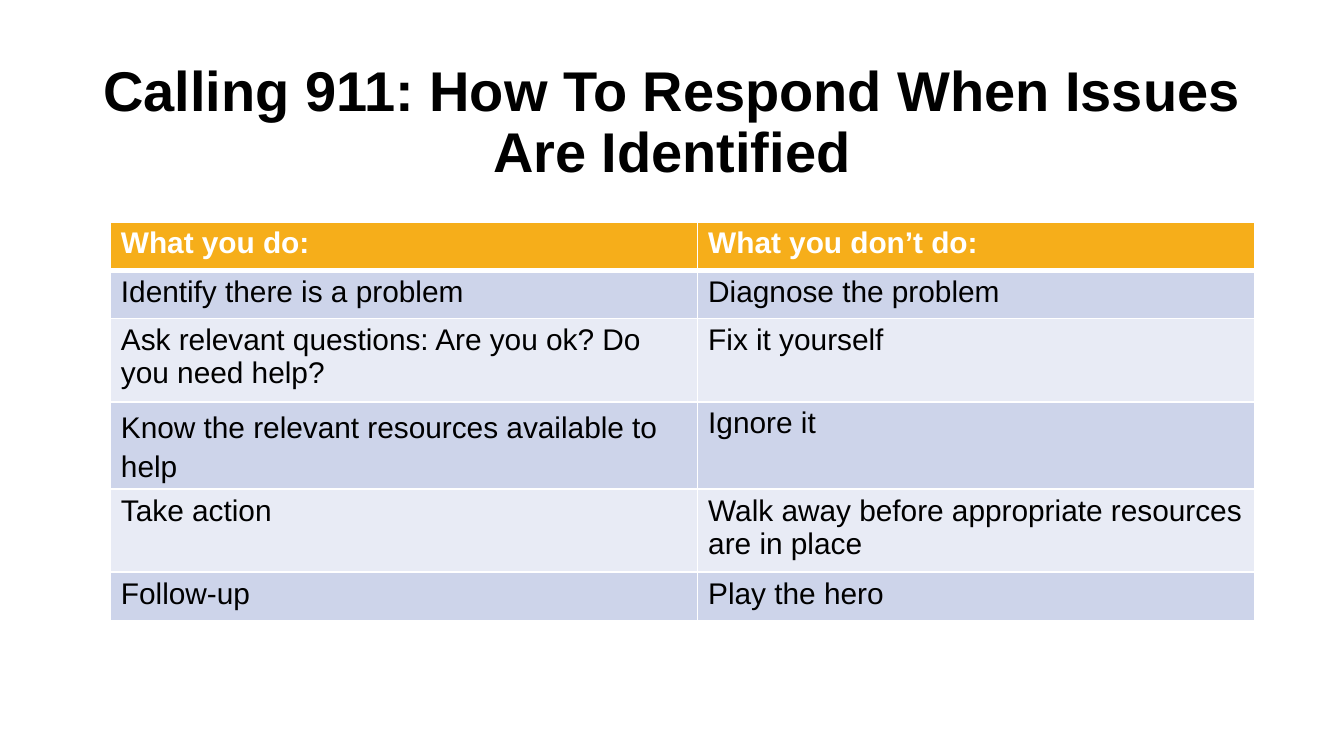
from dataclasses import dataclass

from lxml import etree
from pptx import Presentation
from pptx.dml.color import RGBColor
from pptx.enum.text import MSO_ANCHOR, PP_ALIGN
from pptx.oxml.ns import qn
from pptx.util import Inches, Pt

CENTER = PP_ALIGN.CENTER
MIDDLE = MSO_ANCHOR.MIDDLE
TITLE_ONLY = 5


@dataclass(frozen=True)
class Theme:
    font: str = "Arial"
    title_size: int = 30
    cell_size: int = 16
    text: str = "000000"
    white: str = "FFFFFF"
    header: str = "F6AE1A"
    bands: tuple[str, str] = ("CDD4EA", "E8EBF5")
    line: int = 1
    header_line: int = 3


@dataclass(frozen=True)
class Row:
    do: str
    dont: str
    height: float = 0.36
    do_spacing: float | None = None


THEME = Theme()
TALL = 0.62
COLUMNS = (4.37, 4.15)
ROWS = (
    Row("What you do:", "What you don’t do:"),
    Row("Identify there is a problem", "Diagnose the problem"),
    Row("Ask relevant questions: Are you ok? Do you need help?", "Fix it yourself", TALL),
    Row("Know the relevant resources available to help", "Ignore it", TALL, 1.15),
    Row("Take action", "Walk away before appropriate resources are in place", TALL),
    Row("Follow-up", "Play the hero"),
)


def add_run(p, text: str, size: int, color: str, bold: bool) -> None:
    r = p.add_run()
    r.text = text
    r.font.name = THEME.font
    r.font.size = Pt(size)
    r.font.bold = bold
    r.font.color.rgb = RGBColor.from_string(color)


def set_insets(box, x: float, y: float) -> None:
    box.margin_left = box.margin_right = Inches(x)
    box.margin_top = box.margin_bottom = Inches(y)


def set_borders(cell, top: int, bottom: int) -> None:
    """Draw white cell borders; the lines must come before the fill."""
    tc_pr = cell._tc.get_or_add_tcPr()
    widths = {"lnL": THEME.line, "lnR": THEME.line, "lnT": top, "lnB": bottom}
    for i, (tag, width) in enumerate(widths.items()):
        ln = etree.Element(qn(f"a:{tag}"), w=str(Pt(width)))
        fill = etree.SubElement(ln, qn("a:solidFill"))
        etree.SubElement(fill, qn("a:srgbClr"), val=THEME.white)
        tc_pr.insert(i, ln)


def fill_cell(cell, text: str, row: int, spacing: float | None) -> None:
    header = row == 0
    set_insets(cell, 0.08, 0.04)
    cell.fill.solid()
    fill = THEME.header if header else THEME.bands[(row - 1) % 2]
    cell.fill.fore_color.rgb = RGBColor.from_string(fill)
    set_borders(
        cell,
        top=THEME.header_line if row == 1 else THEME.line,
        bottom=THEME.header_line if header else THEME.line,
    )
    p = cell.text_frame.paragraphs[0]
    if spacing:
        p.line_spacing = spacing
    add_run(p, text, THEME.cell_size, THEME.white if header else THEME.text, header)


def add_title(s, text: str) -> None:
    sp = s.shapes.title
    sp.left, sp.top = Inches(0.66), Inches(0.37)
    sp.width, sp.height = Inches(8.68), Inches(1.1)
    tf = sp.text_frame
    tf.word_wrap = True
    tf.vertical_anchor = MIDDLE
    set_insets(tf, 0.07, 0.04)
    p = tf.paragraphs[0]
    p.alignment = CENTER
    p.line_spacing = 0.9
    add_run(p, text, THEME.title_size, THEME.text, True)


def add_advice_table(s, rows: tuple[Row, ...]) -> None:
    table = s.shapes.add_table(
        len(rows), len(COLUMNS), Inches(0.82), Inches(1.65),
        Inches(sum(COLUMNS)), Inches(sum(row.height for row in rows)),
    ).table
    for column, width in zip(table.columns, COLUMNS):
        column.width = Inches(width)
    for i, row in enumerate(rows):
        table.rows[i].height = Inches(row.height)
        fill_cell(table.cell(i, 0), row.do, i, row.do_spacing)
        fill_cell(table.cell(i, 1), row.dont, i, None)


def main() -> None:
    # Widescreen slide, 16:9
    prs = Presentation()
    prs.slide_width = Inches(10)
    prs.slide_height = prs.slide_width * 9 // 16
    s = prs.slides.add_slide(prs.slide_layouts[TITLE_ONLY])

    # Heading
    add_title(s, "Calling 911: How To Respond When Issues Are Identified")

    # Dos and don'ts
    add_advice_table(s, ROWS)

    prs.save("out.pptx")


if __name__ == "__main__":
    main()
